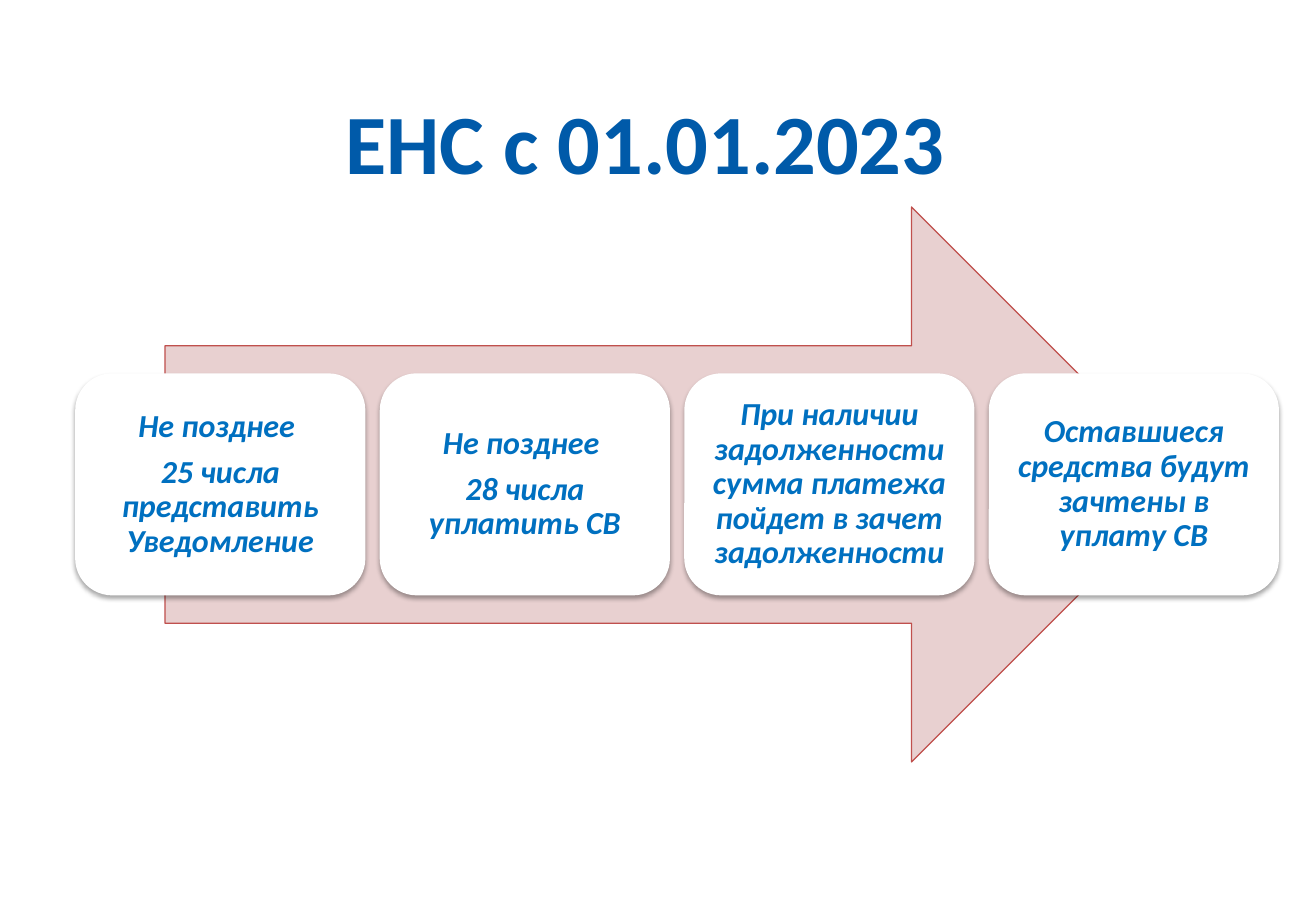
from lxml.etree import SubElement
from pptx import Presentation
from pptx.dml.color import RGBColor
from pptx.enum.shapes import MSO_SHAPE as Kind
from pptx.enum.text import MSO_ANCHOR as Anchor, PP_ALIGN as Align
from pptx.oxml.ns import qn
from pptx.util import Pt

WHITE = RGBColor(0xFF, 0xFF, 0xFF)
NAVY = RGBColor(0x00, 0x5A, 0xA9)
BLUE = RGBColor(0x00, 0x70, 0xC0)
PINK = RGBColor(0xE8, 0xD0, 0xD0)
RED = RGBColor(0xC0, 0x50, 0x4D)
FONT = "Calibri"
GAP = 8.5
STEPS = [
    "Не позднее \n25 числа представить Уведомление",
    "Не позднее \n28 числа уплатить СВ",
    "При наличии задолженности сумма платежа пойдет в зачет задолженности",
    "Оставшиеся средства будут зачтены в уплату СВ",
]


def write(shape, text, size, color, pads, italic=False):
    """Fill a shape with bold centred text; pads are (side, top and bottom)."""
    frame = shape.text_frame
    frame.word_wrap = True
    frame.vertical_anchor = Anchor.MIDDLE
    frame.margin_left = frame.margin_right = Pt(pads[0])
    frame.margin_top = frame.margin_bottom = Pt(pads[1])
    frame.text = text
    for para in frame.paragraphs:
        para.alignment = Align.CENTER
        for run in para.runs:
            font = run.font
            font.name, font.size = FONT, Pt(size)
            font.bold, font.italic = True, italic
            font.color.rgb = color


def add_title(slide, text, left, top, width, height):
    box = slide.shapes.add_textbox(Pt(left), Pt(top), Pt(width), Pt(height))
    write(box, text, 50, NAVY, (7.2, 3.6))


def add_arrow(slide, left, top, width, height):
    arrow = slide.shapes.add_shape(
        Kind.RIGHT_ARROW, Pt(left), Pt(top), Pt(width), Pt(height))
    arrow.shadow.inherit = False
    arrow.fill.solid()
    arrow.fill.fore_color.rgb = PINK
    arrow.line.color.rgb = RED
    arrow.line.width = Pt(0.75)


def cast_shadow(shape):
    """Give the shape a soft shadow straight below it."""
    shape.shadow.inherit = False
    effects = shape._element.spPr.find(qn("a:effectLst"))
    outer = SubElement(effects, qn("a:outerShdw"), blurRad=str(Pt(3.1)),
                       dist=str(Pt(1.8)), dir="5400000", rotWithShape="0")
    black = SubElement(outer, qn("a:srgbClr"), val="000000")
    SubElement(black, qn("a:alpha"), val="35000")


def add_card(slide, text, left, top, width, height):
    card = slide.shapes.add_shape(
        Kind.ROUNDED_RECTANGLE, Pt(left), Pt(top), Pt(width), Pt(height))
    card.fill.solid()
    card.fill.fore_color.rgb = WHITE
    card.line.fill.background()
    cast_shadow(card)
    write(card, text, 19, BLUE, (5.8, 5.8), italic=True)
    for para in card.text_frame.paragraphs:
        para.line_spacing = 0.9
        para.space_after = Pt(6.65)


def add_steps(slide, steps, left, top, width, height):
    """Spread the step cards evenly over the box."""
    pitch = (width + GAP) / len(steps)
    for i, text in enumerate(steps):
        add_card(slide, text, left + i * pitch, top, pitch - GAP, height)


def main():
    deck = Presentation()
    deck.slide_width, deck.slide_height = Pt(780), Pt(540)
    slide = deck.slides.add_slide(deck.slide_layouts[6])
    add_arrow(slide, 97.8, 122.7, 607, 329)
    add_steps(slide, STEPS, 44.6, 221.3, 713.5, 131.6)
    add_title(slide, "ЕНС с 01.01.2023", 69.8, 39.6, 625.7, 87.1)
    deck.save("out.pptx")


if __name__ == "__main__":
    main()
